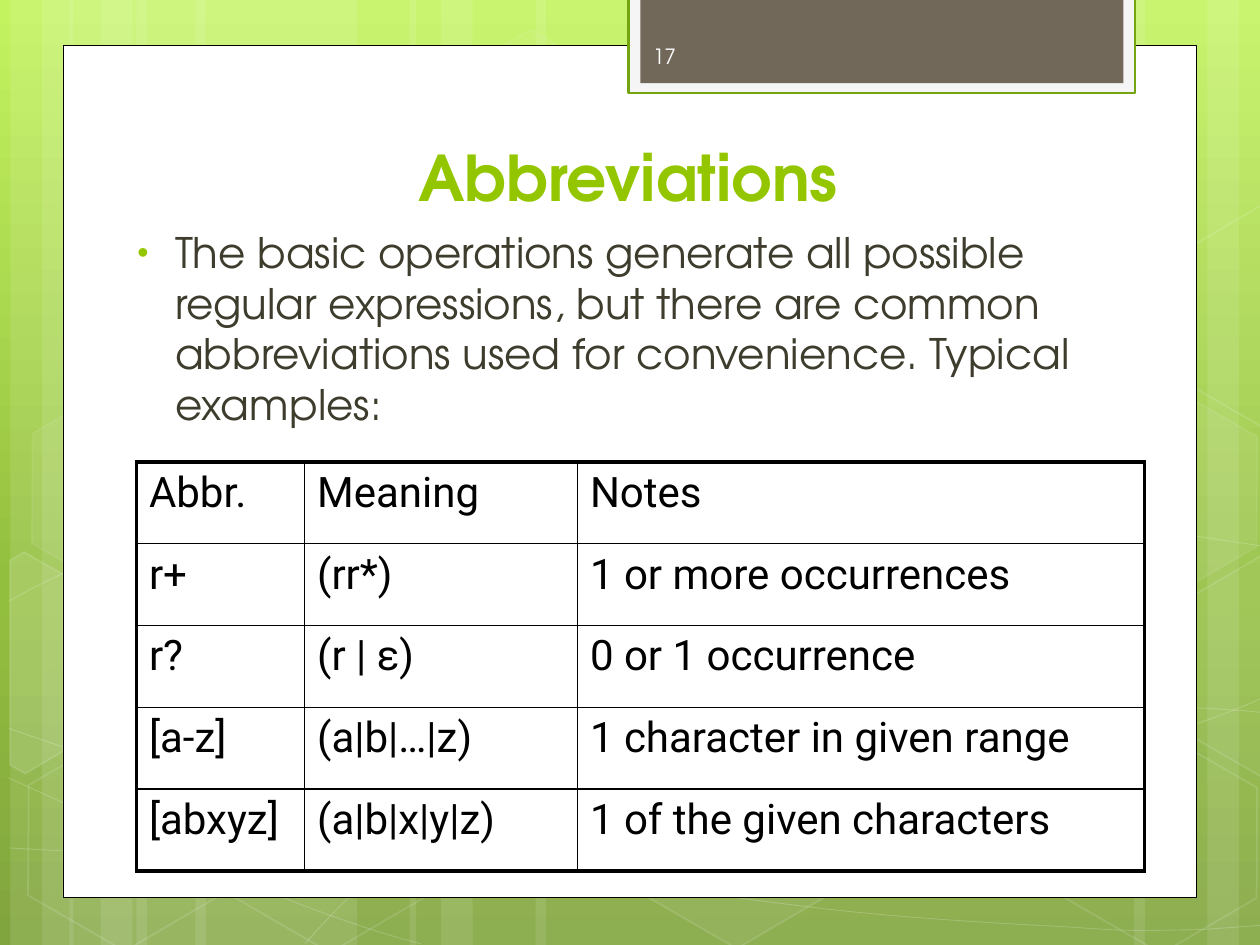
from copy import deepcopy
from dataclasses import dataclass
from math import cos, radians, sin
from typing import Optional

from lxml.etree import SubElement
from pptx import Presentation
from pptx.dml.color import RGBColor
from pptx.enum.shapes import MSO_SHAPE
from pptx.enum.text import MSO_ANCHOR, PP_ALIGN
from pptx.oxml.ns import qn
from pptx.util import Cm, Pt


@dataclass(frozen=True)
class Theme:
    white: str = "FFFFFF"
    black: str = "000000"
    accent: str = "94C600"
    body: str = "3E3D2D"
    number: str = "FEFEFE"
    tab: str = "71685A"
    tab_frame: str = "F5F5F5"
    tab_line: str = "74A510"
    gradient: tuple = ((0, "C3F35F"), (0.62, "93BF3F"), (1, "81A53E"))
    font: str = "TeX Gyre Adventor"
    table_font: str = "Roboto"
    title_size: int = 36
    body_size: int = 24
    number_size: int = 12
    outer_border: float = 2.25
    inner_border: float = 1


@dataclass(frozen=True)
class Paint:
    """Colours with their opacity in percent; no colour means none drawn."""
    fill: Optional[str] = None
    fill_alpha: int = 100
    line: Optional[str] = None
    line_alpha: int = 100
    width: float = 1


@dataclass(frozen=True)
class Box:
    """Left, top, width and height in centimetres."""
    x: float
    y: float
    w: float
    h: float


@dataclass(frozen=True)
class Hexagon:
    x: float
    y: float
    fill_alpha: int
    line_alpha: int


@dataclass(frozen=True)
class CutHexagon:
    """A hexagon cropped by the slide edge, with its corners in inches."""
    points: tuple
    fill_alpha: int


T = Theme()
TILT = 30
STRIPES = ((2.75, 4.45), (0.21, 1.27), (0.85, 2.12), (3.94, 4.45), (1.4, 1.27), (2.03, 2.12),
           (18.63, 4.45), (24.34, 1.27), (22.86, 2.12), (10.8, 7.83), (8.26, 1.27), (8.89, 2.12))
# Each curve, in inches, is a start point followed by cubic segments of three points.
CURVES = (
    ((0.07, 6.73), (0.61, 6.76), (1.15, 6.79), (1.9, 6.78), (2.65, 6.77), (3.58, 6.75),
     (4.58, 6.65), (5.58, 6.55), (7, 6.36), (7.92, 6.17), (8.83, 5.98), (9.77, 5.68), (10.07, 5.51)),
    ((0.07, 4.77), (0.36, 4.61), (0.65, 4.46), (1.21, 4.31), (1.78, 4.16), (2.59, 3.94),
     (3.47, 3.87), (4.36, 3.8), (5.44, 3.79), (6.54, 3.87), (7.64, 3.95), (9.47, 4.26), (10.07, 4.34)),
    ((0.06, 6.17), (1.27, 6.72), (2.47, 7.27), (3.34, 7.49)),
    ((0.07, 5.78), (0.38, 5.89), (0.7, 6), (1.28, 6.16), (1.86, 6.31), (2.73, 6.56), (3.57, 6.73),
     (4.4, 6.9), (5.45, 7.08), (6.28, 7.18), (7.11, 7.29), (8, 7.33), (8.53, 7.36),
     (9.05, 7.4), (9.19, 7.38), (9.45, 7.38), (9.71, 7.37), (9.89, 7.35), (10.07, 7.34)),
    ((2.42, 7.49), (2.6, 7.29), (2.78, 7.09), (3.02, 6.91), (3.26, 6.73), (3.6, 6.53), (3.88, 6.39),
     (4.16, 6.25), (4.33, 6.19), (4.7, 6.09), (5.06, 5.99), (5.73, 5.85), (6.08, 5.78),
     (6.44, 5.71), (6.49, 5.71), (6.8, 5.69), (7.11, 5.66), (7.6, 5.63), (7.94, 5.62),
     (8.29, 5.61), (8.86, 5.62), (8.86, 5.62), (9.08, 5.62), (9.31, 5.62), (9.53, 5.62),
     (9.71, 5.63), (9.88, 5.64), (9.97, 5.65), (10.06, 5.66), (10.03, 5.65), (10.06, 5.66)),
)
BACKDROP = (
    Hexagon(8.48, 0.91, 4, 8), Hexagon(12.62, 14.96, 6, 12),
    CutHexagon(((0.08, 4.45), (0.19, 4.38), (0.96, 4.82), (0.95, 5.7), (0.2, 6.14), (0.08, 6.07)), 10),
    Hexagon(0.28, 15.01, 0, 12), Hexagon(0.36, 7.92, 7, 8), Hexagon(4.42, 15.04, 0, 12),
    Hexagon(19.13, 11.51, 10, 12), Hexagon(21.18, 15.06, 0, 12), Hexagon(21.18, 7.98, 7, 8),
    CutHexagon(((9.26, 4.85), (10.01, 4.41), (10.09, 4.46), (10.09, 6.13), (10.02, 6.17), (9.26, 5.73)), 4),
    CutHexagon(((9.26, 2.07), (10.01, 1.63), (10.1, 1.68), (10.09, 3.35), (10.02, 3.39), (9.26, 2.95)), 0),
)
COLUMNS = (3.39, 5.5, 11.43)
ROW_HEIGHT = 1.65
ROWS = (
    ("Abbr.", "Meaning", "Notes"),
    ("r+", "(rr*)", "1 or more occurrences"),
    ("r?", "(r | ε)", "0 or 1 occurrence"),
    ("[a-z]", "(a|b|…|z)", "1 character in given range"),
    ("[abxyz]", "(a|b|x|y|z)", "1 of the given characters"),
)


def frame(box: Box) -> tuple:
    return tuple(Cm(v) for v in (box.x, box.y, box.w, box.h))


def set_solid(fill, color: str, alpha: int, parent) -> None:
    fill.solid()
    fill.fore_color.rgb = RGBColor.from_string(color)
    if alpha < 100:
        clr = parent.find(qn("a:solidFill")).find(qn("a:srgbClr"))
        SubElement(clr, qn("a:alpha")).set("val", str(alpha * 1000))


def apply_paint(sp, paint: Paint) -> None:
    sp.shadow.inherit = False
    props = sp.element.spPr
    if paint.fill and paint.fill_alpha:
        set_solid(sp.fill, paint.fill, paint.fill_alpha, props)
    else:
        sp.fill.background()
    if paint.line:
        sp.line.width = Pt(paint.width)
        set_solid(sp.line.fill, paint.line, paint.line_alpha, props.find(qn("a:ln")))
    else:
        sp.line.fill.background()


def add_preset(s, kind, box: Box, paint: Paint):
    sp = s.shapes.add_shape(kind, *frame(box))
    apply_paint(sp, paint)
    return sp


def add_outline(s, points, paint: Paint, close: bool):
    start, *rest = [(Cm(x * 2.54), Cm(y * 2.54)) for x, y in points]
    builder = s.shapes.build_freeform(*start)
    builder.add_line_segments(rest, close=close)
    sp = builder.convert_to_shape()
    apply_paint(sp, paint)
    return sp


def add_curve(s, points, paint: Paint) -> None:
    """Draw the points as one outline, then join each three into a cubic segment."""
    sp = add_outline(s, points, paint, False)
    outline = sp.element.find(".//" + qn("a:path"))
    lines = outline.findall(qn("a:lnTo"))
    for i in range(0, len(lines), 3):
        segment = SubElement(outline, qn("a:cubicBezTo"))
        for line in lines[i:i + 3]:
            segment.append(line[0])
            outline.remove(line)


def rotate(x: float, y: float, degrees: float) -> tuple:
    a = radians(degrees)
    return x * cos(a) - y * sin(a), x * sin(a) + y * cos(a)


def add_cut_hexagon(s, h: CutHexagon) -> None:
    """Draw the corners upright, then tilt the shape back into place."""
    upright = [rotate(x, y, -TILT) for x, y in h.points]
    sp = add_outline(s, upright, Paint(T.white, h.fill_alpha, T.white, 12), True)
    x, y = rotate(sp.left + sp.width / 2, sp.top + sp.height / 2, TILT)
    sp.left, sp.top = int(x - sp.width / 2), int(y - sp.height / 2)
    sp.rotation = TILT


def add_hexagon(s, h: Hexagon) -> None:
    sp = add_preset(s, MSO_SHAPE.HEXAGON, Box(h.x, h.y, 4.45, 3.86),
                    Paint(T.white, h.fill_alpha, T.white, h.line_alpha))
    sp.adjustments[0] = 0.285
    sp.rotation = TILT


def style_text(p, font: str, size: int, color: str, bold: bool = False) -> None:
    for r in p.runs:
        r.font.name, r.font.size, r.font.bold = font, Pt(size), bold
        r.font.color.rgb = RGBColor.from_string(color)


def add_text(s, box: Box, text: str, size: int, color: str, anchor=MSO_ANCHOR.TOP,
             align=PP_ALIGN.LEFT, bold: bool = False):
    tf = s.shapes.add_textbox(*frame(box)).text_frame
    tf.word_wrap = True
    tf.vertical_anchor = anchor
    tf.text = text
    p = tf.paragraphs[0]
    p.alignment = align
    style_text(p, T.font, size, color, bold)
    return p


def add_bullet(p, color: str, percent: int) -> None:
    pPr = p._p.get_or_add_pPr()
    pPr.set("marL", str(Cm(0.95)))
    pPr.set("indent", str(Cm(-0.76)))
    SubElement(SubElement(pPr, qn("a:buClr")), qn("a:srgbClr")).set("val", color)
    SubElement(pPr, qn("a:buSzPct")).set("val", str(percent * 1000))
    SubElement(pPr, qn("a:buFont")).set("typeface", "Arial")
    SubElement(pPr, qn("a:buChar")).set("char", "•")


def add_border(cell, side: str, width: float) -> None:
    ln = SubElement(cell._tc.get_or_add_tcPr(), qn(f"a:ln{side}"), w=str(Pt(width)))
    SubElement(SubElement(ln, qn("a:solidFill")), qn("a:srgbClr")).set("val", T.black)


def add_abbreviation_table(s, x: float, y: float) -> None:
    box = Box(x, y, sum(COLUMNS), ROW_HEIGHT * len(ROWS))
    table = s.shapes.add_table(len(ROWS), len(COLUMNS), *frame(box)).table
    table.first_row = table.horz_banding = False
    for column, width in zip(table.columns, COLUMNS):
        column.width = Cm(width)
    for i, row in enumerate(ROWS):
        table.rows[i].height = Cm(ROW_HEIGHT)
        for j, text in enumerate(row):
            cell = table.cell(i, j)
            cell.text_frame.text = text
            style_text(cell.text_frame.paragraphs[0], T.table_font, T.body_size, T.black)
            edges = {"L": j == 0, "R": j == len(COLUMNS) - 1, "T": i == 0, "B": i == len(ROWS) - 1}
            for side, is_outer in edges.items():
                add_border(cell, side, T.outer_border if is_outer else T.inner_border)
            cell.fill.background()


def add_background(s) -> None:
    fill = s.background.fill
    fill.gradient()
    fill.gradient_angle = 270
    stops = s.element.find(".//" + qn("a:gsLst"))
    stops.append(deepcopy(stops[0]))
    for stop, (position, color) in zip(fill.gradient_stops, T.gradient):
        stop.position = position
        stop.color.rgb = RGBColor.from_string(color)
    for x, width in STRIPES:
        add_preset(s, MSO_SHAPE.RECTANGLE, Box(x, 0, width, 19.05), Paint(T.white, 10))
    for curve in CURVES:
        add_curve(s, curve, Paint(line=T.white, line_alpha=20, width=0.5))
    for h in BACKDROP:
        (add_hexagon if isinstance(h, Hexagon) else add_cut_hexagon)(s, h)


def main() -> None:
    prs = Presentation()
    prs.slide_width, prs.slide_height = Cm(25.4), Cm(19.05)
    s = prs.slides.add_slide(prs.slide_layouts[6])
    add_background(s)
    for box, paint in (
        (Box(1.27, 0.91, 22.86, 17.18), Paint(T.white, line=T.black, width=0.5)),
        (Box(12.67, -0.05, 10.21, 1.93), Paint(T.tab_frame, line=T.tab_line, width=1.25)),
        (Box(12.91, -0.05, 9.74, 1.73), Paint(T.tab)),
    ):
        add_preset(s, MSO_SHAPE.RECTANGLE, box, paint)
    add_text(s, Box(2.91, 2.84, 19.5, 1.6), "Abbreviations", T.title_size, T.accent,
             MSO_ANCHOR.BOTTOM, PP_ALIGN.CENTER, True)
    p = add_text(s, Box(2.33, 4.45, 21.17, 9.75),
                 "The basic operations generate all possible regular expressions, but there are "
                 "common abbreviations used for convenience. Typical examples:", T.body_size, T.body)
    add_bullet(p, T.accent, 76)
    add_abbreviation_table(s, 2.75, 9.31)
    add_text(s, Box(12.91, 0.62, 3.7, 1.01), "17", T.number_size, T.number, MSO_ANCHOR.MIDDLE)
    prs.save("out.pptx")


if __name__ == "__main__":
    main()
